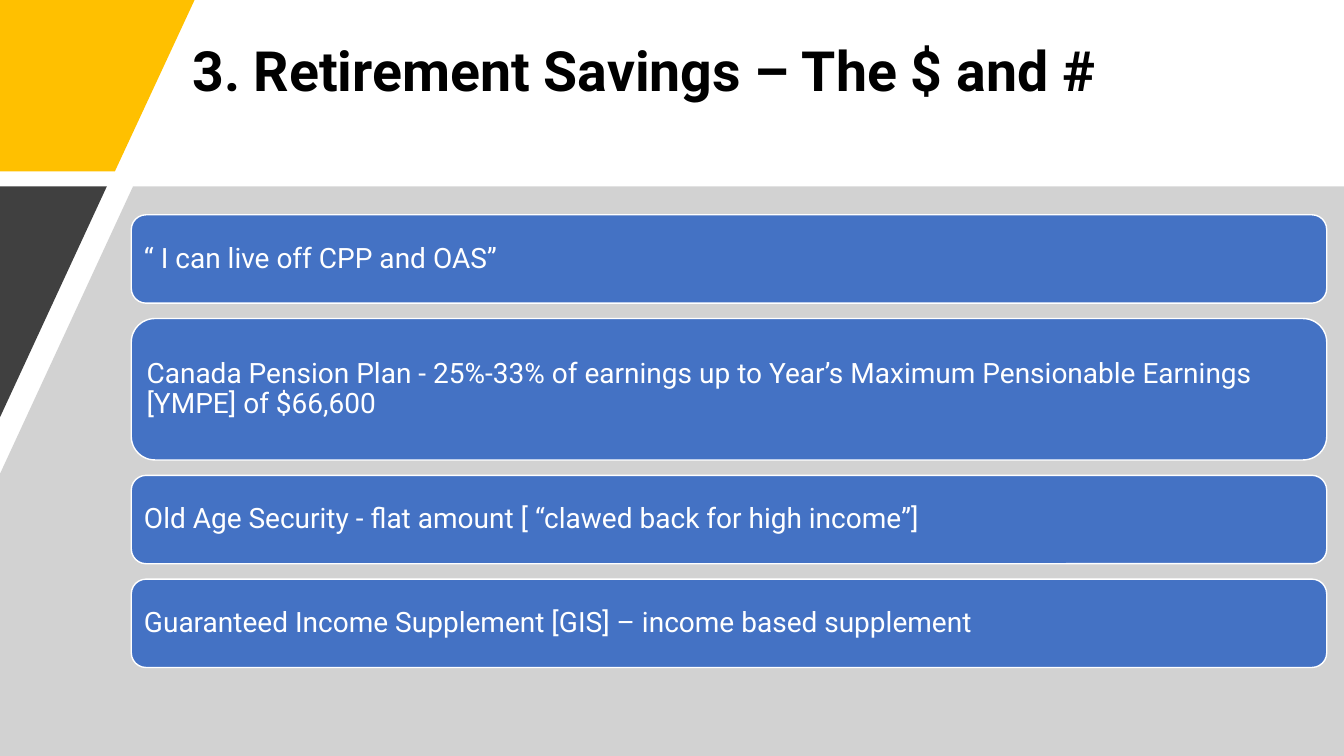
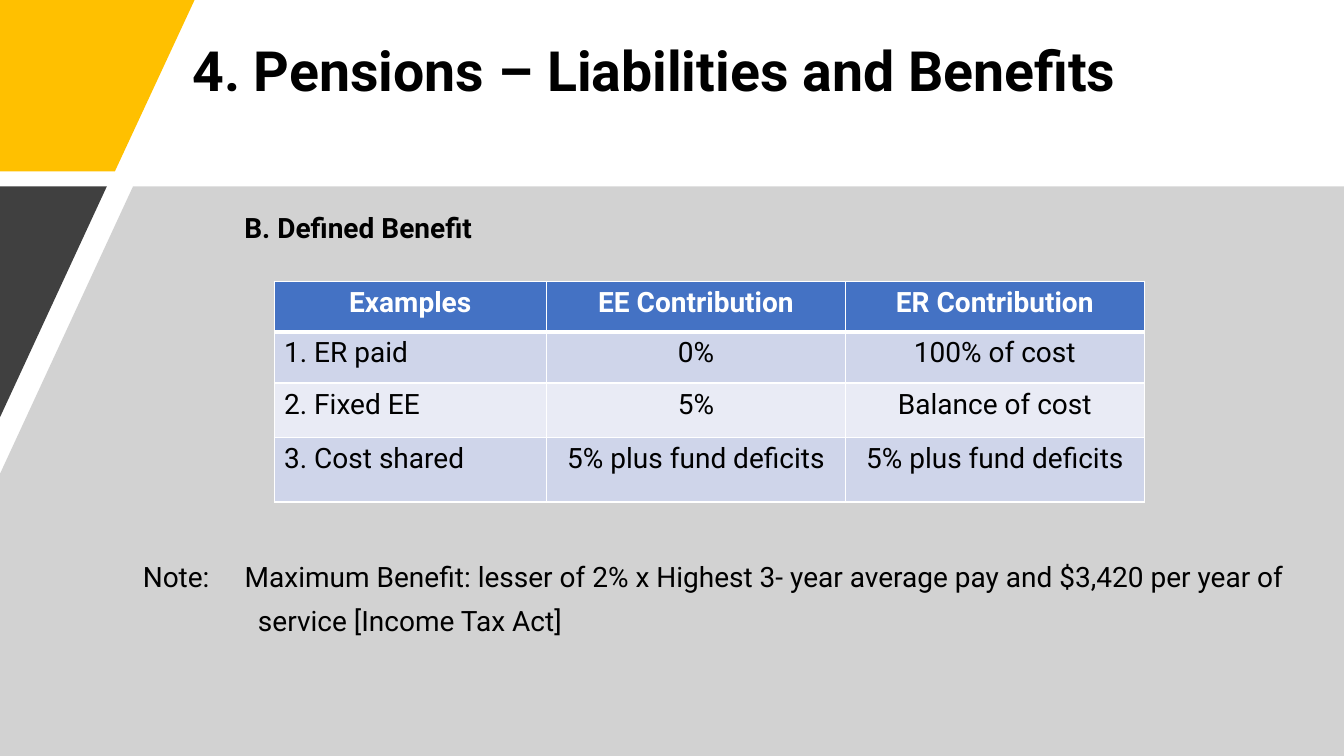
from collections import namedtuple

from lxml.etree import SubElement
from pptx import Presentation
from pptx.dml.color import RGBColor
from pptx.enum.shapes import MSO_SHAPE as Preset
from pptx.enum.text import MSO_ANCHOR as Anchor, PP_ALIGN as Align
from pptx.oxml.ns import qn
from pptx.util import Pt

WHITE = RGBColor(0xFF, 0xFF, 0xFF)
BLACK = RGBColor(0, 0, 0)
YELLOW = RGBColor(0xFF, 0xC0, 0x00)
CHARCOAL = RGBColor(0x40, 0x40, 0x40)
GREY = RGBColor(0xA6, 0xA6, 0xA6)
BLUE = RGBColor(0x44, 0x72, 0xC4)
ROW_TINTS = (RGBColor(0xCF, 0xD5, 0xEA), RGBColor(0xE9, 0xEB, 0xF5))

BODY_FONT = {"name": "Roboto", "size": Pt(20), "bold": False}
BOLD_FONT = {**BODY_FONT, "bold": True}
TITLE_FONT = {**BOLD_FONT, "size": Pt(39.6)}
BODY_PARAGRAPH = {"line_spacing": 0.9, "space_before": Pt(10)}

Box = namedtuple("Box", "left top width height")

SLIDE_WIDTH, SLIDE_HEIGHT = 960, 540
BAND_TOP = 133.2
TITLE_BOX = Box(130.3, 28.8, 737.3, 46.8)
CARDS_BOX = Box(93.8, 153.4, 853.9, 323.4)
HEADING_BOX = Box(167.4, 149.8, 400, 32)
TABLE_BOX = Box(195.8, 200.9, 621.6, 157.8)
NOTE_BOX = Box(94.9, 398.6, 865.1, 66)

CARD_GAP = 11
CARDS = (
    ("“ I can live off CPP and OAS”", 1),
    ("Canada Pension Plan - 25%-33% of earnings up to Year’s Maximum "
     "Pensionable Earnings [YMPE] of $66,600", 1.6),
    ("Old Age Security - flat amount [ “clawed back for high income”]", 1),
    ("Guaranteed Income Supplement [GIS] – income based supplement", 1),
)

CONTRIBUTIONS = (
    ("Examples", "EE Contribution", "ER Contribution"),
    ("1. ER paid", "0%", "100% of cost"),
    ("2. Fixed EE", "5%", "Balance of cost"),
    ("3. Cost shared", "5% plus fund deficits", "5% plus fund deficits"),
)
COLUMN_SHARES = (0.31, 0.34, 0.34)
ROW_SHARES = (0.5, 0.51, 0.54, 0.64)

# Text, left margin and first-line indent of each paragraph
NOTE = (
    ("Note:\tMaximum Benefit: lesser of 2% x Highest 3- year average pay "
     "and $3,420 per year of", 72.8, -72.8),
    ("service [Income Tax Act]", 82.3, 0),
)


def apply(target, values):
    for name, value in values.items():
        setattr(target, name, value)


def points(values):
    return [Pt(value) for value in values]


def split(total, shares):
    return [total * share / sum(shares) for share in shares]


def write(paragraph, text, font, color=BLACK, **paragraph_format):
    run = paragraph.add_run()
    run.text = text
    apply(run.font, font)
    run.font.color.rgb = color
    apply(paragraph, {"line_spacing": 0.9, **paragraph_format})


def add_text_frame(slide, box):
    frame = slide.shapes.add_textbox(*points(box)).text_frame
    frame.word_wrap = True
    return frame


def add_polygon(slide, corners, color):
    start, *others = [points(corner) for corner in corners]
    builder = slide.shapes.build_freeform(*start, scale=1.0)
    builder.add_line_segments(others, close=True)
    polygon = builder.convert_to_shape()
    polygon.shadow.inherit = False
    polygon.fill.solid()
    polygon.fill.fore_color.rgb = color
    polygon.line.fill.background()
    return polygon


def add_framed_slide(deck, title):
    """Add a slide with the slanted bands and its title."""
    slide = deck.slides.add_slide(deck.slide_layouts[6])
    add_polygon(slide, [(0, 0), (139, 0), (82.1, 122.4), (0, 122.4)], YELLOW)
    band = add_polygon(
        slide,
        [(95, BAND_TOP), (SLIDE_WIDTH, BAND_TOP), (SLIDE_WIDTH, SLIDE_HEIGHT),
         (0, SLIDE_HEIGHT), (0, 338.4)],
        GREY)
    tint = band.fill._xPr.find(qn("a:solidFill"))[0]
    SubElement(tint, qn("a:alpha"), val="50000")
    add_polygon(slide, [(0, BAND_TOP), (76.3, BAND_TOP), (0, 298.1)], CHARCOAL)

    frame = add_text_frame(slide, TITLE_BOX)
    frame.vertical_anchor = Anchor.MIDDLE
    write(frame.paragraphs[0], title, TITLE_FONT)
    return slide


def add_cards(slide, box):
    usable = box.height - CARD_GAP * (len(CARDS) - 1)
    heights = split(usable, [share for _, share in CARDS])
    top = box.top
    for (text, _), height in zip(CARDS, heights):
        card = slide.shapes.add_shape(
            Preset.ROUNDED_RECTANGLE,
            *points((box.left, top, box.width, height)))
        card.shadow.inherit = False
        card.fill.solid()
        card.fill.fore_color.rgb = BLUE
        card.line.color.rgb = WHITE
        card.line.width = Pt(1)
        apply(card.text_frame, {
            "word_wrap": True, "vertical_anchor": Anchor.MIDDLE,
            "margin_left": Pt(6), "margin_right": Pt(6),
            "margin_top": Pt(6), "margin_bottom": Pt(6)})
        write(card.text_frame.paragraphs[0], text, BODY_FONT, WHITE,
              alignment=Align.LEFT)
        top += height + CARD_GAP


def add_borders(cell, widths):
    properties = cell._tc.get_or_add_tcPr()
    for side, width in widths.items():
        line = SubElement(properties, qn(f"a:ln{side}"), w=str(Pt(width)))
        fill = SubElement(line, qn("a:solidFill"))
        SubElement(fill, qn("a:srgbClr"), val=str(WHITE))


def add_contribution_table(slide, box):
    table = slide.shapes.add_table(
        len(CONTRIBUTIONS), len(COLUMN_SHARES), *points(box)).table
    apply(table, {"first_row": False, "horz_banding": False})
    for column, width in zip(table.columns, split(box.width, COLUMN_SHARES)):
        column.width = Pt(width)
    for row, height in zip(table.rows, split(box.height, ROW_SHARES)):
        row.height = Pt(height)

    for r, texts in enumerate(CONTRIBUTIONS):
        header = r == 0
        for c, text in enumerate(texts):
            cell = table.cell(r, c)
            add_borders(cell, {"L": 1, "R": 1, "T": 3 if r == 1 else 1,
                               "B": 3 if header else 1})
            cell.fill.solid()
            cell.fill.fore_color.rgb = BLUE if header else ROW_TINTS[(r - 1) % 2]
            write(cell.text_frame.paragraphs[0], text,
                  BOLD_FONT if header else BODY_FONT,
                  WHITE if header else BLACK,
                  alignment=Align.CENTER if header or c else Align.LEFT,
                  line_spacing=1.0)


def add_heading(slide, box):
    write(add_text_frame(slide, box).paragraphs[0], "B. Defined Benefit",
          BOLD_FONT, **BODY_PARAGRAPH)


def add_note(slide, box):
    frame = add_text_frame(slide, box)
    for i, (text, margin, indent) in enumerate(NOTE):
        paragraph = frame.add_paragraph() if i else frame.paragraphs[0]
        write(paragraph, text, BODY_FONT, **BODY_PARAGRAPH)
        properties = paragraph._p.get_or_add_pPr()
        properties.set("marL", str(Pt(margin)))
        properties.set("indent", str(Pt(indent)))


def build_savings_slide(deck):
    slide = add_framed_slide(deck, "3. Retirement Savings – The $ and #")
    add_cards(slide, CARDS_BOX)


def build_pensions_slide(deck):
    slide = add_framed_slide(deck, "4. Pensions – Liabilities and Benefits")
    add_heading(slide, HEADING_BOX)
    add_contribution_table(slide, TABLE_BOX)
    add_note(slide, NOTE_BOX)


def main():
    deck = Presentation()
    deck.slide_width, deck.slide_height = Pt(SLIDE_WIDTH), Pt(SLIDE_HEIGHT)
    build_savings_slide(deck)
    build_pensions_slide(deck)
    deck.save("out.pptx")


if __name__ == "__main__":
    main()
